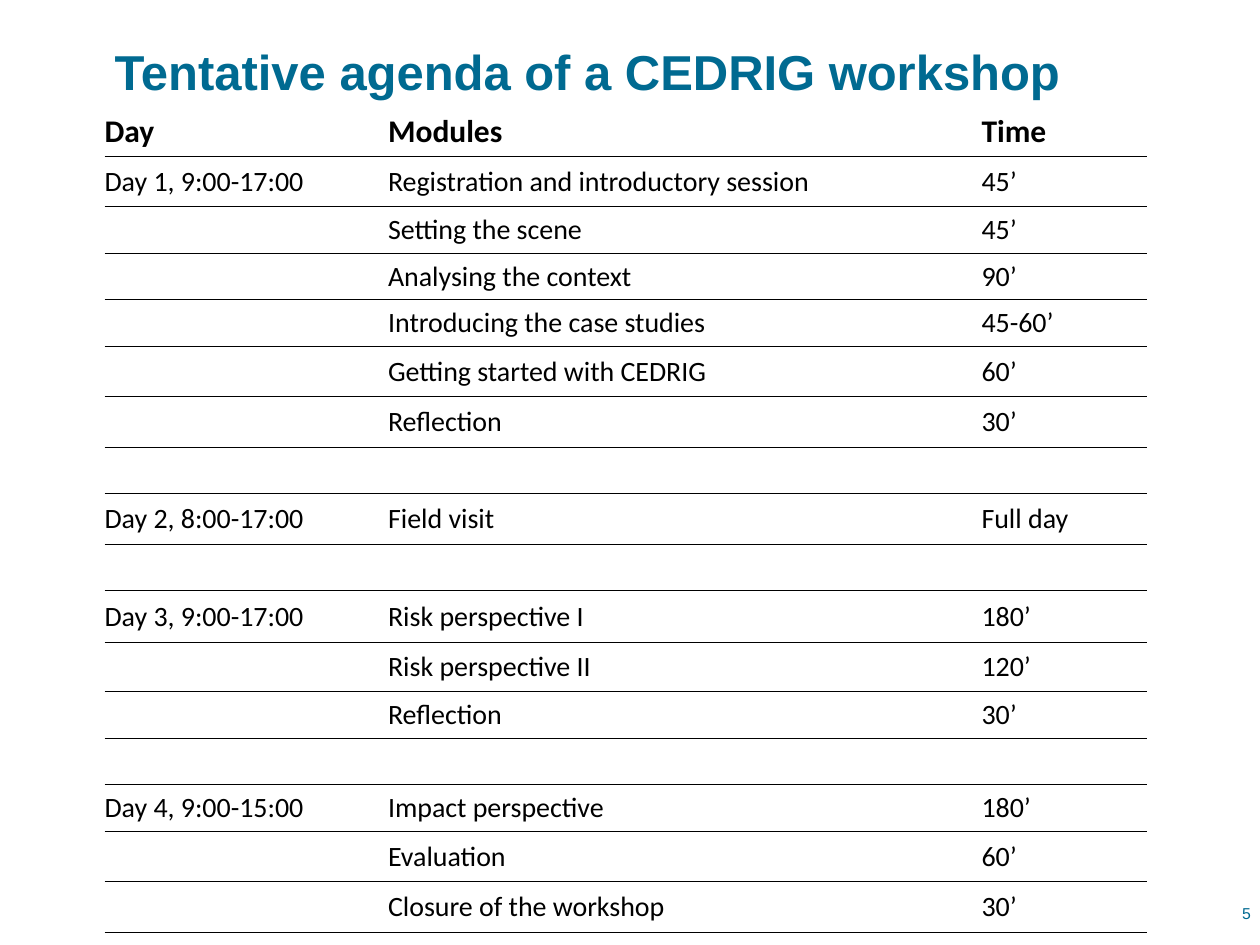
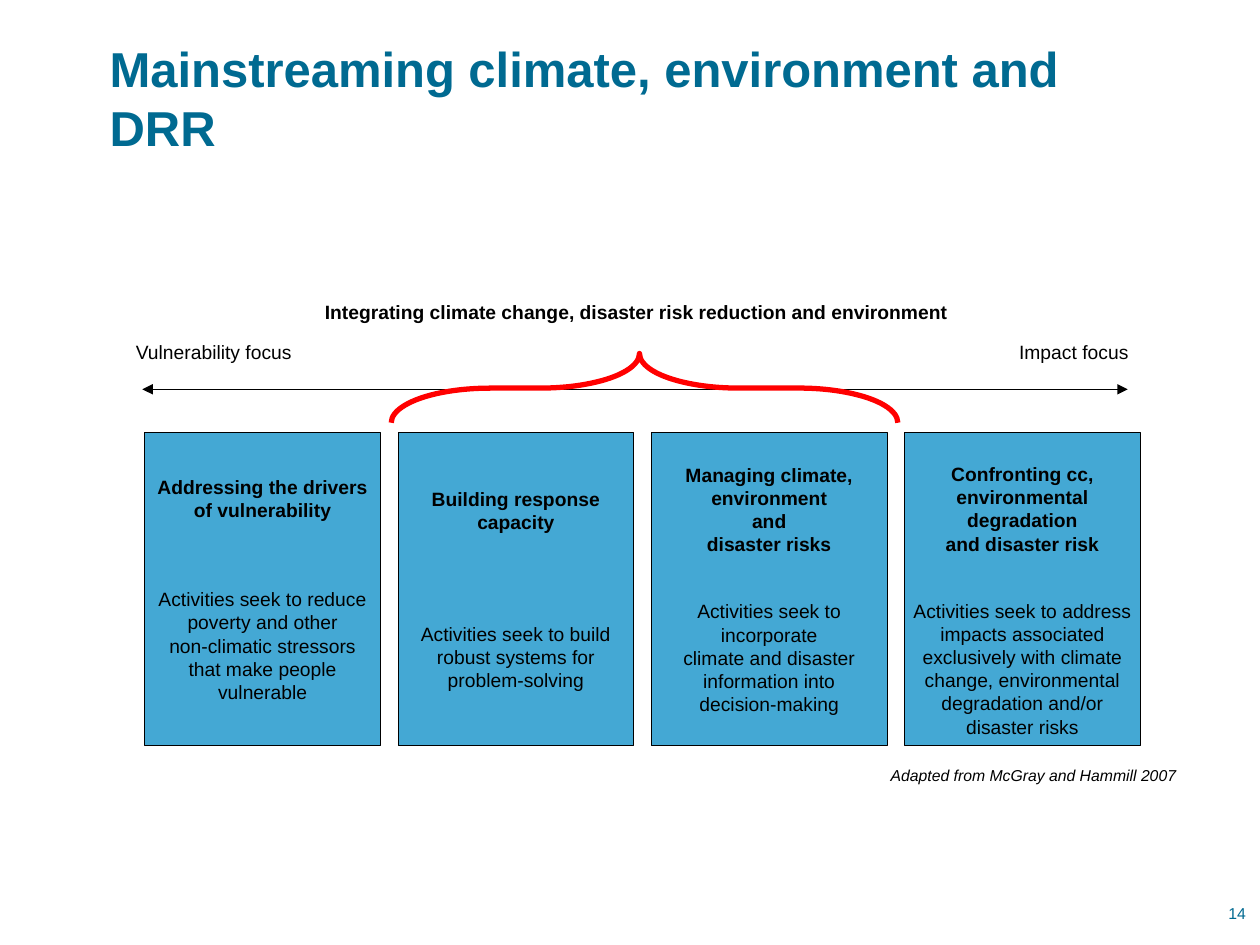
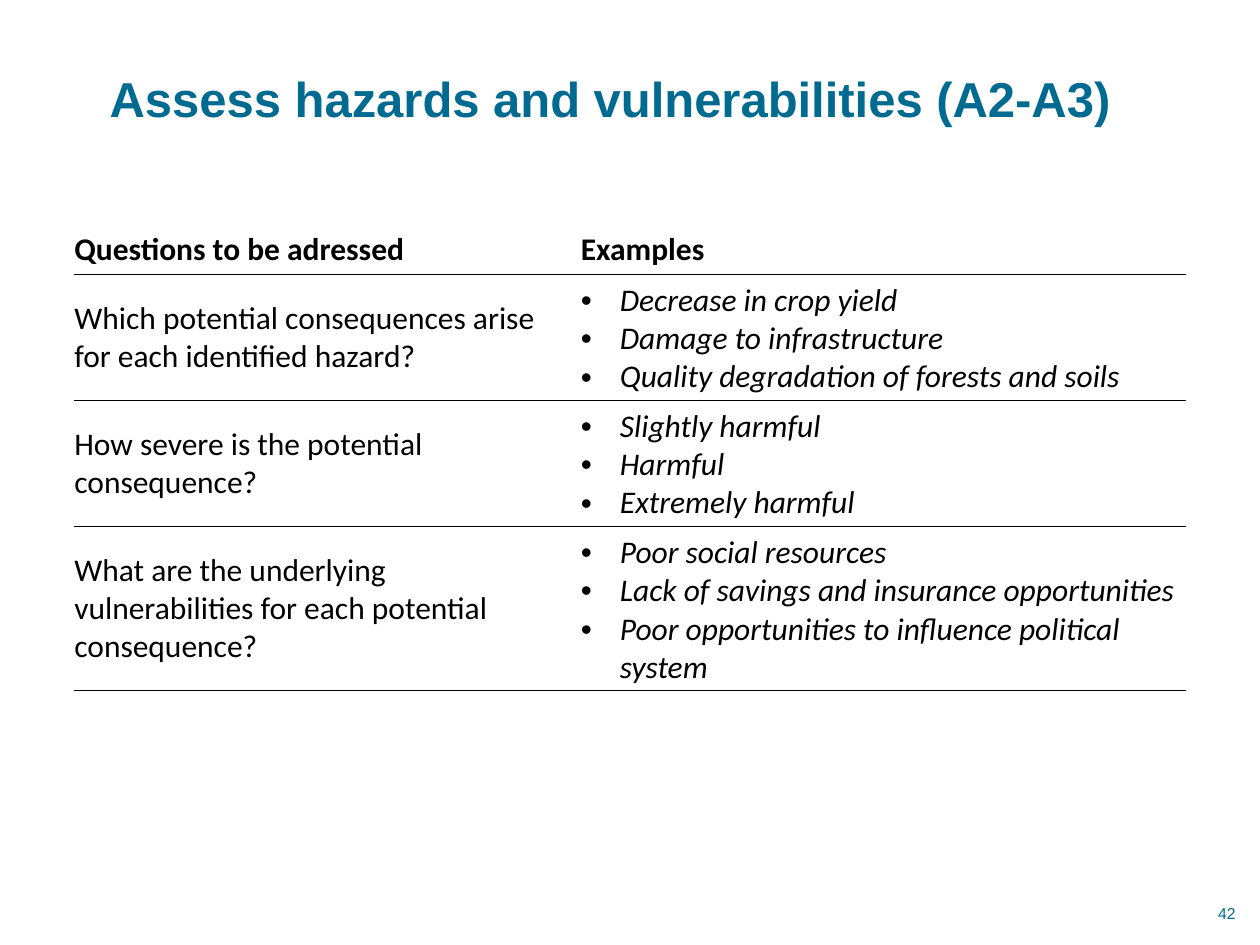
"""Build three CEDRIG workshop slides: agenda, mainstreaming diagram and hazard questions."""
from lxml.etree import SubElement
from pptx import Presentation
from pptx.dml.color import RGBColor
from pptx.enum.shapes import MSO_CONNECTOR, MSO_SHAPE
from pptx.enum.text import MSO_ANCHOR, MSO_AUTO_SIZE, PP_ALIGN
from pptx.oxml.ns import qn
from pptx.util import Inches, Pt

COLORS = {"title": "006A91", "text": "000000", "box": "44A8D4", "brace": "FF0000"}
NO_STYLE = "{2D5ABB26-0587-4C30-8999-92F81FD0307C}"
LINE = 12.65

prs = Presentation()
prs.slide_width, prs.slide_height = Inches(10), Inches(7.5)
U = prs.slide_width / 100


def grid(*units):
    """Turn hundredths of the slide width into lengths."""
    return [round(u * U) for u in units]


def write(tf, lines, size=11, font="Arial", color="text", bold=False, italic=False,
          align=PP_ALIGN.LEFT, anchor=None, before=0, bullet=False, wrap=False):
    """Append lines to a text frame as formatted paragraphs."""
    tf.word_wrap = wrap
    if anchor is not None:
        tf.vertical_anchor = anchor
    for i, line in enumerate(lines):
        p = tf.add_paragraph() if tf.text else tf.paragraphs[0]
        p.alignment = align
        if before and i == 0:
            p.space_before = Pt(before)
        if bullet:
            pPr = p._p.get_or_add_pPr()
            pPr.set("marL", str(Inches(0.31)))
            pPr.set("indent", str(-Inches(0.31)))
            SubElement(pPr, qn("a:buFont"), typeface="Arial")
            SubElement(pPr, qn("a:buChar"), char="•")
        if not line:
            p._p.get_or_add_endParaRPr().set("sz", str(size * 100))
            continue
        r = p.add_run()
        r.text = line
        r.font.size, r.font.name = Pt(size), font
        r.font.bold, r.font.italic = bold, italic
        r.font.color.rgb = RGBColor.from_string(COLORS[color])


slides = []
for title, left, top, number, number_width in [
    ("Tentative agenda of a CEDRIG workshop", 8.7, 3.1, "5", 2.4),
    ("Mainstreaming climate, environment and DRR", 8.3, 5.2, "14", 3.5),
    ("Assess hazards and vulnerabilities (A2-A3)", 8.3, 5.2, "42", 4.3),
]:
    s = prs.slides.add_slide(prs.slide_layouts[5])
    sp = s.shapes.title
    sp.left, sp.top, sp.width, sp.height = grid(left, top, 81.2, 5.1)
    tf = sp.text_frame
    tf.auto_size = MSO_AUTO_SIZE.NONE
    tf.margin_left = tf.margin_right = tf.margin_top = tf.margin_bottom = Inches(0.04)
    write(tf, [title], size=28, color="title", bold=True, anchor=MSO_ANCHOR.MIDDLE, wrap=True)
    sp = s.shapes.add_textbox(*grid(100 - number_width, 71.2, number_width, 2.2))
    write(sp.text_frame, [number], size=9, color="title", wrap=True)
    slides.append(s)
agenda_slide, diagram_slide, hazard_slide = slides

agenda = [
    ("Day", "Modules", "Time"),
    ("Day 1, 9:00-17:00", "Registration and introductory session", "45’"),
    ("", "Setting the scene", "45’"),
    ("", "Analysing the context", "90’"),
    ("", "Introducing the case studies", "45-60’"),
    ("", "Getting started with CEDRIG", "60’"),
    ("", "Reflection", "30’"),
    ("", "", ""),
    ("Day 2, 8:00-17:00", "Field visit", "Full day"),
    ("", "", ""),
    ("Day 3, 9:00-17:00", "Risk perspective I", "180’"),
    ("", "Risk perspective II", "120’"),
    ("", "Reflection", "30’"),
    ("", "", ""),
    ("Day 4, 9:00-15:00", "Impact perspective", "180’"),
    ("", "Evaluation", "60’"),
    ("", "Closure of the workshop", "30’"),
]
questions = [
    ("Questions to be adressed", "Examples"),
    ("Which potential consequences arise for each identified hazard?",
     ["Decrease in crop yield", "Damage to infrastructure",
      "Quality degradation of forests and soils"]),
    ("How severe is the potential consequence?",
     ["Slightly harmful", "Harmful", "Extremely harmful"]),
    ("What are the underlying vulnerabilities for each potential consequence?",
     ["Poor social resources", "Lack of savings and insurance opportunities",
      "Poor opportunities to influence political system"]),
]
agenda_heights = [4, 4, 3.7, 3.7, 3.7, 4, 4, 3.7, 4, 3.7, 4.1, 3.9, 3.7, 3.7, 3.7, 4, 4]

for s, rows, left, top, widths, heights, body_size in [
    (agenda_slide, agenda, 8.3, 8.4, [22.5, 47.1, 13.1], agenda_heights, 16),
    (hazard_slide, questions, 5.9, 17.8, [40.2, 48], [4, 10, 10, 13], 18),
]:
    frame = s.shapes.add_table(len(rows), len(widths),
                               *grid(left, top, sum(widths), sum(heights)))
    table = frame.table
    table.horz_banding = table.first_row = False
    table._tbl.tblPr.find(qn("a:tableStyleId")).text = NO_STYLE
    for column, width in zip(table.columns, grid(*widths)):
        column.width = width
    for row, height in zip(table.rows, grid(*heights)):
        row.height = height
    for y, values in enumerate(rows):
        for x, value in enumerate(values):
            cell = table.cell(y, x)
            cell.vertical_anchor = MSO_ANCHOR.MIDDLE
            cell.margin_left = 0
            cell.margin_right = 0 if x == len(widths) - 1 else Inches(0.08)
            bulleted = isinstance(value, list)
            write(cell.text_frame, value if bulleted else [value], font="Calibri",
                  size=body_size if y else 18, bold=y == 0, italic=bulleted,
                  bullet=bulleted, wrap=True)
            border = SubElement(cell._tc.get_or_add_tcPr(), qn("a:lnB"), w=str(Pt(0.5)))
            fill = SubElement(border, qn("a:solidFill"))
            SubElement(fill, qn("a:srgbClr"), val=COLORS["text"])
            cell.fill.background()

shapes = diagram_slide.shapes
approaches = [
    (["Addressing the drivers", "of vulnerability"], 3, 0,
     ["Activities seek to reduce", "poverty and other", "non-climatic stressors",
      "that make people", "vulnerable"]),
    (["Building response", "capacity"], 4, 0,
     ["Activities seek to build", "robust systems for", "problem-solving"]),
    (["Managing climate,", "environment", "and", "disaster risks"], 2, 0,
     ["Activities seek to", "incorporate", "climate and disaster",
      "information into", "decision-making"]),
    (["Confronting cc,", "environmental", "degradation", "and disaster risk"], 2, 1,
     ["Activities seek to address", "impacts associated", "exclusively with climate",
      "change, environmental", "degradation and/or", "disaster risks"]),
]
for i, (heading, gap, lead, activities) in enumerate(approaches):
    sp = shapes.add_shape(MSO_SHAPE.RECTANGLE, *grid(11.5 + 20.1 * i, 34.3, 18.7, 24.9))
    sp.shadow.inherit = False
    sp.fill.solid()
    sp.fill.fore_color.rgb = RGBColor.from_string(COLORS["box"])
    sp.line.color.rgb = RGBColor.from_string(COLORS["text"])
    sp.line.width = Pt(0.5)
    tf = sp.text_frame
    tf.margin_top = Inches(0.05) + Pt(LINE * lead)
    write(tf, heading, bold=True, align=PP_ALIGN.CENTER, anchor=MSO_ANCHOR.MIDDLE)
    write(tf, activities, align=PP_ALIGN.CENTER, before=LINE * gap)

axis = shapes.add_connector(MSO_CONNECTOR.STRAIGHT, *grid(11.3, 30.9, 89.5, 30.9))
axis.line.color.rgb = RGBColor.from_string(COLORS["text"])
axis.line.width = Pt(0.5)
for end in ("a:headEnd", "a:tailEnd"):
    SubElement(axis.line._get_or_add_ln(), qn(end), type="triangle")
SubElement(axis._element.spPr, qn("a:effectLst"))

brace = shapes.add_shape(MSO_SHAPE.LEFT_BRACE, *grid(48.4, 10.7, 5.5, 40.2))
brace.rotation = 90
brace.adjustments[0], brace.adjustments[1] = 1.43, 0.51
brace.shadow.inherit = False
brace.fill.background()
brace.line.color.rgb = RGBColor.from_string(COLORS["brace"])
brace.line.width = Pt(3)

for text, place, style in [
    ("Vulnerability focus", (9.8, 26.5, 14.6, 2.9), {}),
    ("Impact focus", (79.9, 26.5, 10.7, 2.9), {}),
    ("Integrating climate change, disaster risk reduction and environment",
     (24.8, 23.3, 51.7, 2.9), {"bold": True}),
    ("Adapted from McGray and Hammill 2007", (69.7, 60.3, 24.9, 2.5),
     {"size": 9, "italic": True}),
]:
    tf = shapes.add_textbox(*grid(*place)).text_frame
    tf.auto_size = MSO_AUTO_SIZE.SHAPE_TO_FIT_TEXT
    write(tf, [text], **style)

prs.save("out.pptx")
